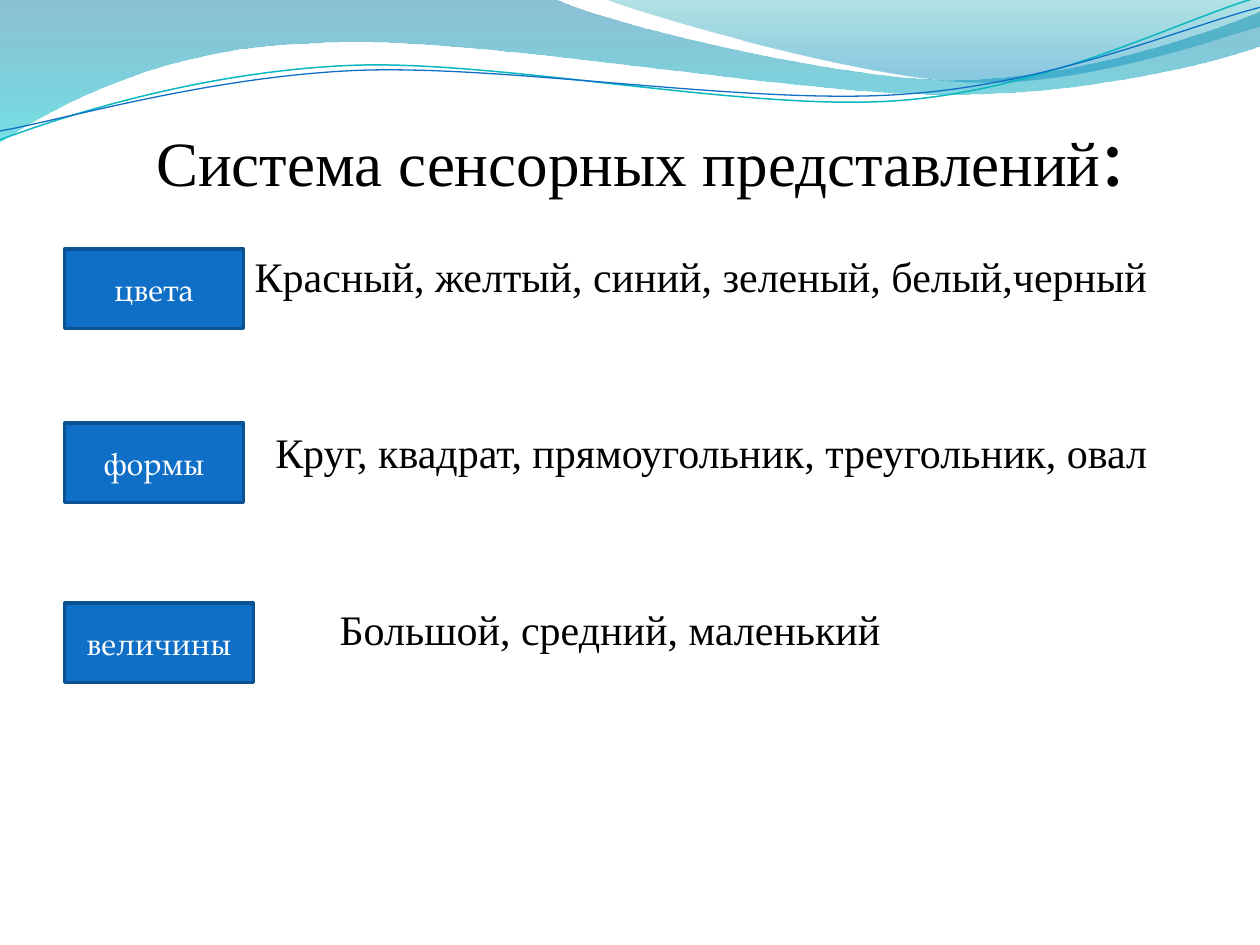
from pptx import Presentation
from pptx.dml.color import RGBColor
from pptx.enum.shapes import MSO_SHAPE
from pptx.enum.text import MSO_ANCHOR, MSO_AUTO_SIZE, PP_ALIGN
from pptx.oxml.ns import qn
from pptx.util import Cm, Pt
from lxml import etree

RECT = MSO_SHAPE.RECTANGLE
TOP, MID, LOW = MSO_ANCHOR.TOP, MSO_ANCHOR.MIDDLE, MSO_ANCHOR.BOTTOM
MIDDLE, RIGHT = PP_ALIGN.CENTER, PP_ALIGN.RIGHT
FIXED = MSO_AUTO_SIZE.NONE
BLACK = RGBColor(0x00, 0x00, 0x00)
WHITE = RGBColor(0xFF, 0xFF, 0xFF)
BLUE = RGBColor(0x0F, 0x6F, 0xC6)
NAVY = RGBColor(0x0B, 0x52, 0x92)
TEAL = RGBColor(0x0A, 0xB8, 0xBF)
DEEP = RGBColor(0x00, 0x74, 0xA1)
CYAN = RGBColor(0x00, 0xC6, 0xCF)
GREEN = RGBColor(0x00, 0xA1, 0xA9)
SKY = RGBColor(0x00, 0x8B, 0xBF)
SERIF = "Times New Roman"

deck = Presentation()
deck.slide_width, deck.slide_height = Cm(25.4), Cm(19.05)
slide = deck.slides.add_slide(deck.slide_layouts[5])
shapes = slide.shapes


def draw(start, parts, close):
    dots = [(Cm(part[i]), Cm(part[i + 1])) for part in parts for i in range(0, len(part), 2)]
    form = shapes.build_freeform(Cm(start[0]), Cm(start[1]), scale=1.0)
    form.add_line_segments(dots, close=close)
    shape = form.convert_to_shape()
    shape.shadow.inherit = False
    nodes = iter(list(shape.element.spPr.iter(qn("a:lnTo"))))
    for part in parts:
        group = [next(nodes) for _ in range(len(part) // 2)]
        if len(group) == 3:
            bend = etree.Element(qn("a:cubicBezTo"))
            group[0].addprevious(bend)
            for node in group:
                bend.append(node[0])
                node.getparent().remove(node)
    return shape


def write(para, text, align, **style):
    para.alignment = align
    run = para.add_run()
    run.text = text
    color = style.pop("color")
    for key, value in style.items():
        setattr(run.font, key, value)
    run.font.color.rgb = color


waves = [
    ((0, 0), [
        (11.18, -0.03),
        (12.09, 0.43, 16.87, 1.6, 19.25, 1.6),
        (21.67, 1.6, 24.33, 0.66, 25.4, 0.23),
        (25.43, 0.91),
        (24.97, 1.12, 22.1, 1.93, 18.95, 1.9),
        (15.8, 1.9, 9.7, 0.71, 6.53, 0.86),
        (3.28, 0.91, 1.17, 2.11, -0.03, 2.87),
    ], [(0, DEEP, 45), (1, CYAN, 55)]),
    ((12.17, -0.03), [
        (12.93, 0.28, 17.32, 1.57, 19.53, 1.65),
        (21.74, 1.75, 24.41, 0.81, 25.4, 0.53),
        (25.4, 0),
    ], [(0, GREEN, 30), (0.8, SKY, 45)]),
]
for start, parts, stops in waves:
    wave = draw(start, parts, True)
    wave.line.fill.background()
    wave.fill.gradient()
    wave.fill.gradient_angle = 270
    for stop, (place, color, _) in zip(wave.fill.gradient_stops, stops):
        stop.position = place
        stop.color.rgb = color
    tints = list(wave.element.spPr.iter(qn("a:srgbClr")))
    for tint, (_, _, alpha) in zip(tints, stops):
        etree.SubElement(tint, qn("a:alpha"), val=str(alpha * 1000))

curves = [
    ((0, 2.82), [
        (1.22, 2.36, 4.01, 1.45, 7.04, 1.32),
        (10.03, 1.19, 15.06, 2.26, 18.11, 2.03),
        (21.16, 1.8, 23.83, 0.38, 25.35, -0.05),
    ], TEAL, 0.85),
    ((0, 2.64), [
        (1.19, 2.44, 4.17, 1.55, 7.19, 1.42),
        (10.24, 1.3, 15.16, 2.13, 18.21, 1.9),
        (21.23, 1.7, 23.9, 0.53, 25.4, 0.15),
    ], BLUE, 0.75),
]
for start, parts, color, width in curves:
    curve = draw(start, parts, False)
    curve.fill.background()
    curve.line.color.rgb = color
    curve.line.width = Pt(width)

title = shapes.title
title.left, title.top, title.width, title.height = Cm(0), Cm(2.11), Cm(25.88), Cm(2.01)
body = shapes.add_textbox(Cm(1.47), Cm(4.92), Cm(21.82), Cm(11.2))
for box, anchor, right, pad in ((title, LOW, 0.05, 0), (body, TOP, 0.16, 0.13)):
    frame = {
        "word_wrap": True, "auto_size": FIXED, "vertical_anchor": anchor,
        "margin_left": Cm(0), "margin_right": Cm(right),
        "margin_top": Cm(pad), "margin_bottom": Cm(pad),
    }
    for key, value in frame.items():
        setattr(box.text_frame, key, value)

head = title.text_frame.paragraphs[0]
write(head, "Система сенсорных представлений", MIDDLE, name=SERIF, size=Pt(36), color=BLACK)
write(head, ":", MIDDLE, name="Calibri", size=Pt(50.4), color=BLACK)

rows = [
    ("цвета", 5.02, 3.61, "Красный, желтый, синий, зеленый, белый,черный", RIGHT),
    ("формы", 8.53, 3.61, "Круг, квадрат, прямоугольник, треугольник, овал", RIGHT),
    ("величины", 12.16, 3.81, "Большой, средний, маленький", MIDDLE),
]
for place, (label, top, width, text, align) in enumerate(rows):
    para = body.text_frame.add_paragraph() if place else body.text_frame.paragraphs[0]
    para.space_before = Pt(72 if place else 0)
    write(para, text, align, name=SERIF, size=Pt(24), color=BLACK)
    tag = shapes.add_shape(RECT, Cm(1.3), Cm(top), Cm(width), Cm(1.6))
    tag.shadow.inherit = False
    tag.fill.solid()
    tag.fill.fore_color.rgb = BLUE
    tag.line.color.rgb = NAVY
    tag.line.width = Pt(2)
    tag.text_frame.vertical_anchor = MID
    write(tag.text_frame.paragraphs[0], label, MIDDLE,
          name="TeX Gyre Pagella", size=Pt(18), color=WHITE)

deck.save("out.pptx")
